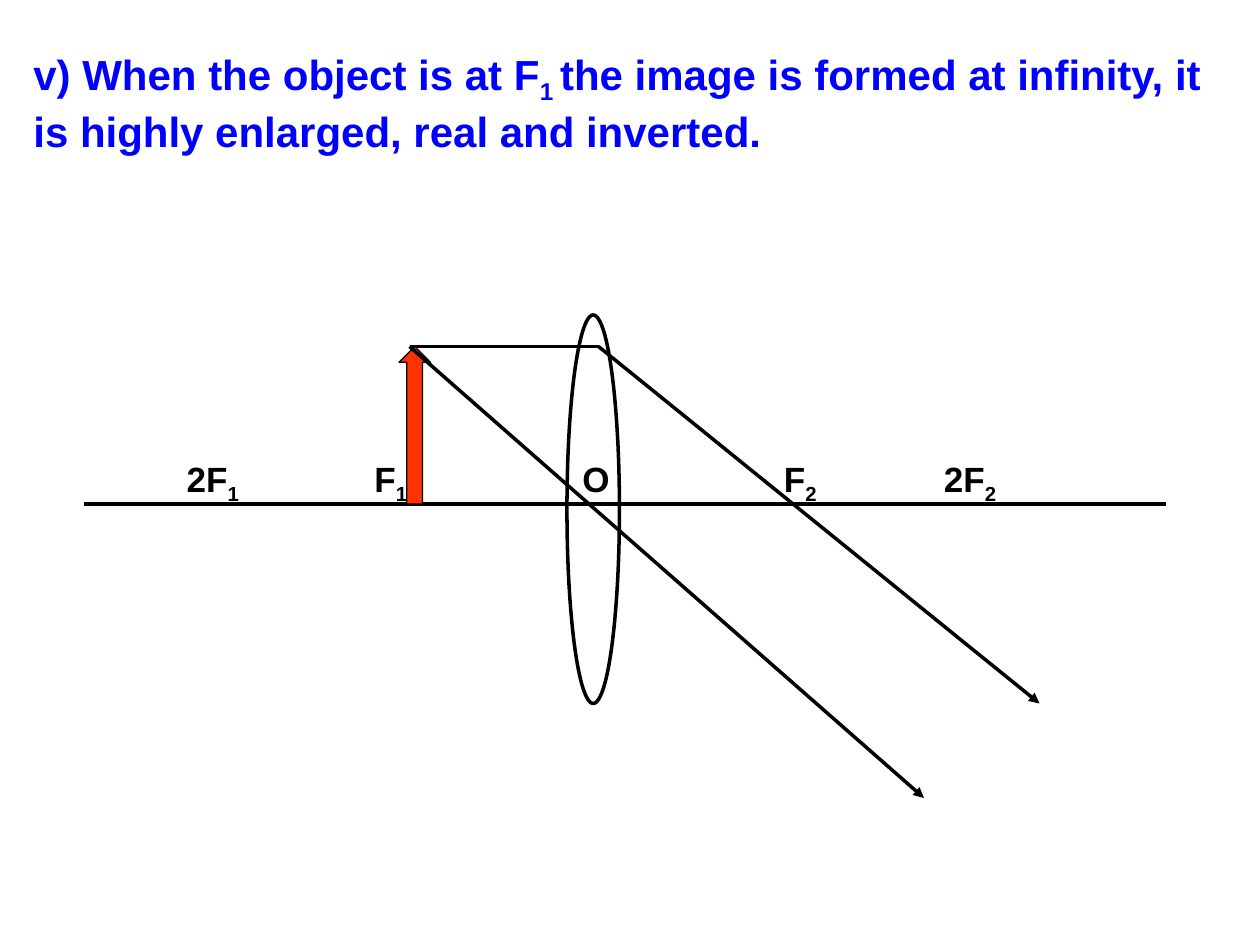
import pptx
import pptx.dml.color
import pptx.enum.shapes
import pptx.oxml.ns
import pptx.util
from lxml import etree

RGBColor = pptx.dml.color.RGBColor
MSO_SHAPE = pptx.enum.shapes.MSO_SHAPE
BLUE = RGBColor(0x00, 0x00, 0xFF)
BLACK = RGBColor(0x00, 0x00, 0x00)
RED = RGBColor(0xFF, 0x33, 0x00)

# Grid of 120 columns by 90 rows, twelve to the inch
CELL = pptx.util.Inches(1) // 12
COLS, ROWS = 120, 90

TITLE_FONT = {"name": "Arial", "size": pptx.util.Pt(24), "bold": True}
LABEL_FONT = {"name": "Arial", "size": pptx.util.Pt(20), "bold": True}

# (text, is subscript)
TITLE = [
    ("v) When the object is at F", False),
    ("1 ", True),
    ("the image is formed at infinity, it is highly enlarged, real and inverted.", False),
]
# (letter, subscript, tab stop in inches from the start of the text)
LABELS = [("2F", "1", 0.55), ("F", "1", 2.04), ("O", "", 3.69),
          ("F", "2", 5.29), ("2F", "2", 6.56)]


def add_child(parent, tag, **attrs):
    return etree.SubElement(parent, pptx.oxml.ns.qn(tag), attrs)


def cells(box, *part):
    """Turn a part given in cells within a box into slide lengths."""
    left, top = box[:2]
    offsets = (left, top, 0, 0)
    return [(value + offset) * CELL for value, offset in zip(part, offsets)]


def add_text(slide, place, runs, font, color):
    tf = slide.shapes.add_textbox(*place).text_frame
    tf.word_wrap = True
    p = tf.paragraphs[0]
    for text, subscript in runs:
        r = p.add_run()
        r.text = text
        for name, value in font.items():
            setattr(r.font, name, value)
        r.font.color.rgb = color
        if subscript:
            r.font._element.set("baseline", "-25000")
    return p


def add_shape(slide, kind, place, fill, width):
    sp = slide.shapes.add_shape(kind, *place)
    sp.shadow.inherit = False
    if fill is None:
        sp.fill.background()
    else:
        sp.fill.solid()
        sp.fill.fore_color.rgb = fill
    sp.line.color.rgb = BLACK
    sp.line.width = pptx.util.Pt(width)


def add_line(slide, box, start, end, arrow=False):
    line = slide.shapes.add_connector(
        pptx.enum.shapes.MSO_CONNECTOR.STRAIGHT, *cells(box, *start), *cells(box, *end))
    line.line.color.rgb = BLACK
    line.line.width = pptx.util.Pt(2)
    if arrow:
        add_child(line.line._get_or_add_ln(), "a:tailEnd", type="triangle")
    add_child(line._element.spPr, "a:effectLst")


def add_title(slide, box):
    left, top, width, height = box
    place = cells(box, 0, 0, width, height)
    p = add_text(slide, place, TITLE, TITLE_FONT, BLUE)
    p.space_before = pptx.util.Pt(4.8)


def add_labels(slide, box):
    runs = []
    for letter, subscript, _ in LABELS:
        runs.append(("\t" + letter, False))
        if subscript:
            runs.append((subscript, True))
    p = add_text(slide, cells(box, 0, 0, *box[2:]), runs, LABEL_FONT, BLACK)
    tabs = add_child(p._p.get_or_add_pPr(), "a:tabLst")
    for _, _, stop in LABELS:
        add_child(tabs, "a:tab", pos=str(int(pptx.util.Inches(stop))), algn="l")


def add_ray_diagram(slide, box):
    left, top, width, height = box
    axis, tip = 18, 3
    object_tip, lens_hit = (31, tip), (49, tip)

    # Lens and principal axis
    add_shape(slide, MSO_SHAPE.OVAL, cells(box, 46, 0, 5, 37), None, 2)
    add_line(slide, box, (0, axis), (width, axis))
    add_labels(slide, (left + 2, top + axis - 5, 98, 5))

    # Object
    add_shape(slide, MSO_SHAPE.UP_ARROW, cells(box, 30, tip, 3, axis - tip), RED, 0.75)

    # Rays: refracted, parallel to the axis, through the optical centre
    add_line(slide, box, lens_hit, (91, 37), arrow=True)
    add_line(slide, box, object_tip, lens_hit)
    add_line(slide, box, object_tip, (80, height), arrow=True)


def main():
    prs = pptx.Presentation()
    prs.slide_width, prs.slide_height = COLS * CELL, ROWS * CELL
    slide = prs.slides.add_slide(prs.slide_layouts[6])
    add_title(slide, (2, 4, 116, 82))
    add_ray_diagram(slide, (8, 30, 103, 46))
    prs.save("out.pptx")


if __name__ == "__main__":
    main()
